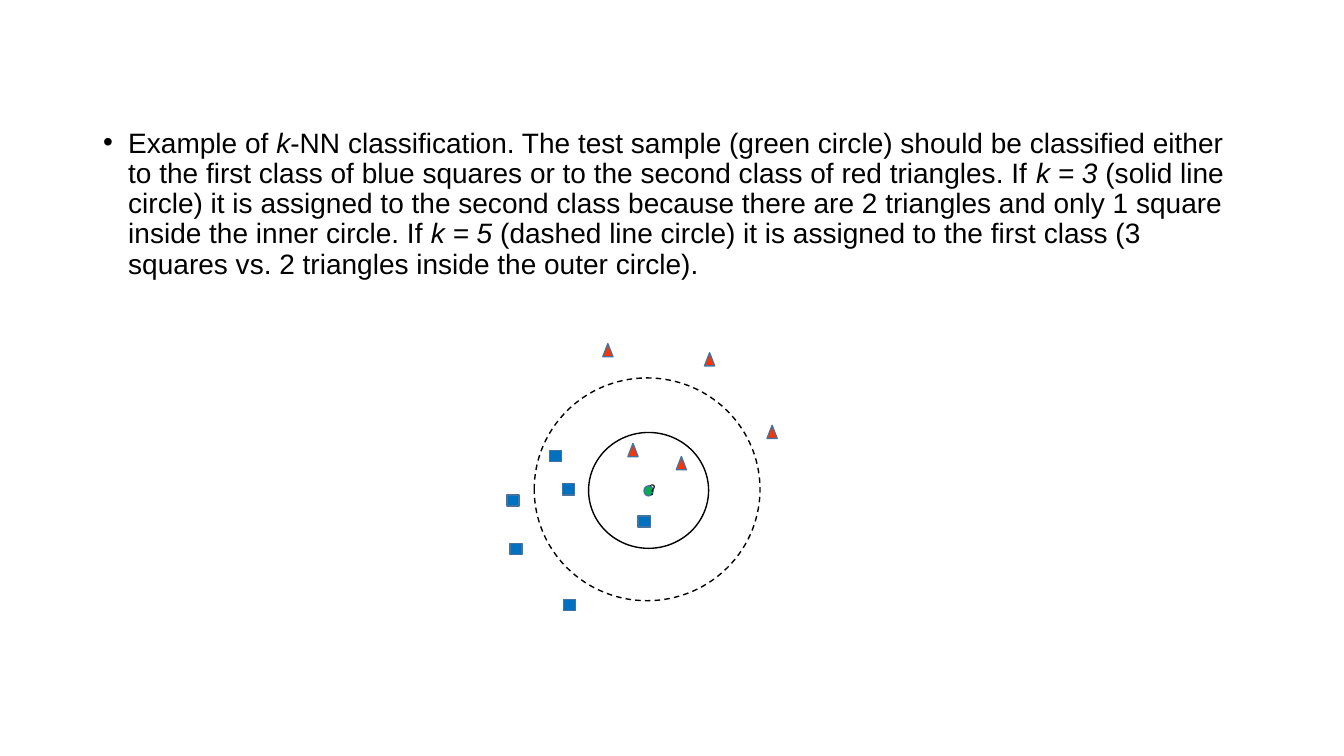
from dataclasses import dataclass

from lxml import etree
from pptx import Presentation
from pptx import util as u
from pptx.dml.color import RGBColor
from pptx.enum import dml, shapes, text
from pptx.oxml.ns import qn


@dataclass(frozen=True)
class Theme:
    """Colours, fonts and sizes used on the slide."""

    ink: str = "000000"
    outline: str = "43739E"
    sample: str = "00B050"
    triangle: str = "FF3300"
    square: str = "0070C0"
    body_font: str = "Arial"
    mark_font: str = "Noto Sans CJK KR"
    body_size: int = 20
    mark_size: int = 10
    line_width: int = 1


THEME = Theme()
WIDTH, HEIGHT = u.Inches(13.33), u.Inches(7.5)
OVAL = shapes.MSO_SHAPE.OVAL
BODY_BOX = ((50.05, 53.27), (86.25, 73.73))
INNER_CIRCLE = ((48.26, 64.87), (8.93, 15.33))
OUTER_CIRCLE = ((48.15, 64.73), (16.8, 29.47))
TEST_SAMPLE = ((48.26, 64.93), (0.68, 1.33))
QUESTION_MARK = ((48.64, 64.87), (0.68, 3.6))
TRIANGLE_SIZE = (0.75, 1.73)
TRIANGLES = [(47.1, 59.53), (50.7, 61.27), (57.45, 57.13), (52.8, 47.53), (45.23, 46.33)]
SQUARE_SIZE = (0.9, 1.47)
SQUARES = [(38.18, 66.2), (38.4, 72.6), (42.38, 80.07), (41.33, 60.33), (47.93, 69), (42.3, 64.73)]
EXPLANATION = [
    ("Example of ", False),
    ("k", True),
    ("-NN classification. The test sample (green circle) should be classified either to the first "
     "class of blue squares or to the second class of red triangles. If ", False),
    ("k = 3", True),
    (" (solid line circle) it is assigned to the second class because there are 2 triangles and "
     "only 1 square inside the inner circle. If ", False),
    ("k = 5", True),
    (" (dashed line circle) it is assigned to the first class (3 squares vs. 2 triangles inside "
     "the outer circle).", False),
]


def box(center, size):
    """Turn a centre and size in percent of the slide into left, top, width and height."""
    (x, y), (width, height) = center, size
    shares = ((x - width / 2, WIDTH), (y - height / 2, HEIGHT), (width, WIDTH), (height, HEIGHT))
    return [round(share * whole / 100) for share, whole in shares]


def style_run(run, font, size, italic=False):
    """Set the font, size, colour and slant of a run."""
    run.font.name = font
    run.font.size = u.Pt(size)
    run.font.italic = italic
    run.font.color.rgb = RGBColor.from_string(THEME.ink)


def add_bullet(paragraph):
    """Give a paragraph a round bullet with a hanging indent."""
    properties = paragraph._p.get_or_add_pPr()
    properties.set("marL", str(u.Inches(0.25)))
    properties.set("indent", str(-u.Inches(0.25)))
    etree.SubElement(properties, qn("a:buFont")).set("typeface", THEME.body_font)
    etree.SubElement(properties, qn("a:buChar")).set("char", "•")


def add_explanation(slide):
    """Add the bulleted explanation with its italic terms."""
    frame = slide.shapes.add_textbox(*box(*BODY_BOX)).text_frame
    frame.word_wrap = True
    paragraph = frame.paragraphs[0]
    paragraph.line_spacing = 0.9
    paragraph.space_before = u.Pt(10)
    add_bullet(paragraph)
    for wording, italic in EXPLANATION:
        run = paragraph.add_run()
        run.text = wording
        style_run(run, THEME.body_font, THEME.body_size, italic)


def add_mark(diagram, kind, center, size, fill=None, line=THEME.outline):
    """Add an outlined shape, filled only when a fill colour is given."""
    shape = diagram.shapes.add_shape(kind, *box(center, size))
    shape.shadow.inherit = False
    if fill:
        shape.fill.solid()
        shape.fill.fore_color.rgb = RGBColor.from_string(fill)
    else:
        shape.fill.background()
    shape.line.color.rgb = RGBColor.from_string(line)
    shape.line.width = u.Pt(THEME.line_width)
    return shape


def add_question_mark(diagram):
    """Add the question mark beside the test sample."""
    frame = diagram.shapes.add_textbox(*box(*QUESTION_MARK)).text_frame
    frame.margin_left = frame.margin_right = frame.margin_top = frame.margin_bottom = 0
    frame.vertical_anchor = text.MSO_ANCHOR.MIDDLE
    frame.word_wrap = True
    frame.text = "?"
    style_run(frame.paragraphs[0].runs[0], THEME.mark_font, THEME.mark_size)


def add_diagram(slide):
    """Add the neighbourhood circles, the test sample and both classes."""
    diagram = slide.shapes.add_group_shape()
    add_mark(diagram, OVAL, *INNER_CIRCLE, line=THEME.ink)
    outer = add_mark(diagram, OVAL, *OUTER_CIRCLE, line=THEME.ink)
    outer.line.dash_style = dml.MSO_LINE.DASH
    add_mark(diagram, OVAL, *TEST_SAMPLE, fill=THEME.sample)
    add_question_mark(diagram)
    for center in TRIANGLES:
        add_mark(diagram, shapes.MSO_SHAPE.ISOSCELES_TRIANGLE, center, TRIANGLE_SIZE, THEME.triangle)
    for center in SQUARES:
        add_mark(diagram, shapes.MSO_SHAPE.RECTANGLE, center, SQUARE_SIZE, THEME.square)


def main():
    """Build and save the slide."""
    presentation = Presentation()
    presentation.slide_width, presentation.slide_height = WIDTH, HEIGHT
    slide = presentation.slides.add_slide(presentation.slide_layouts[6])
    add_explanation(slide)
    add_diagram(slide)
    presentation.save("out.pptx")


if __name__ == "__main__":
    main()
